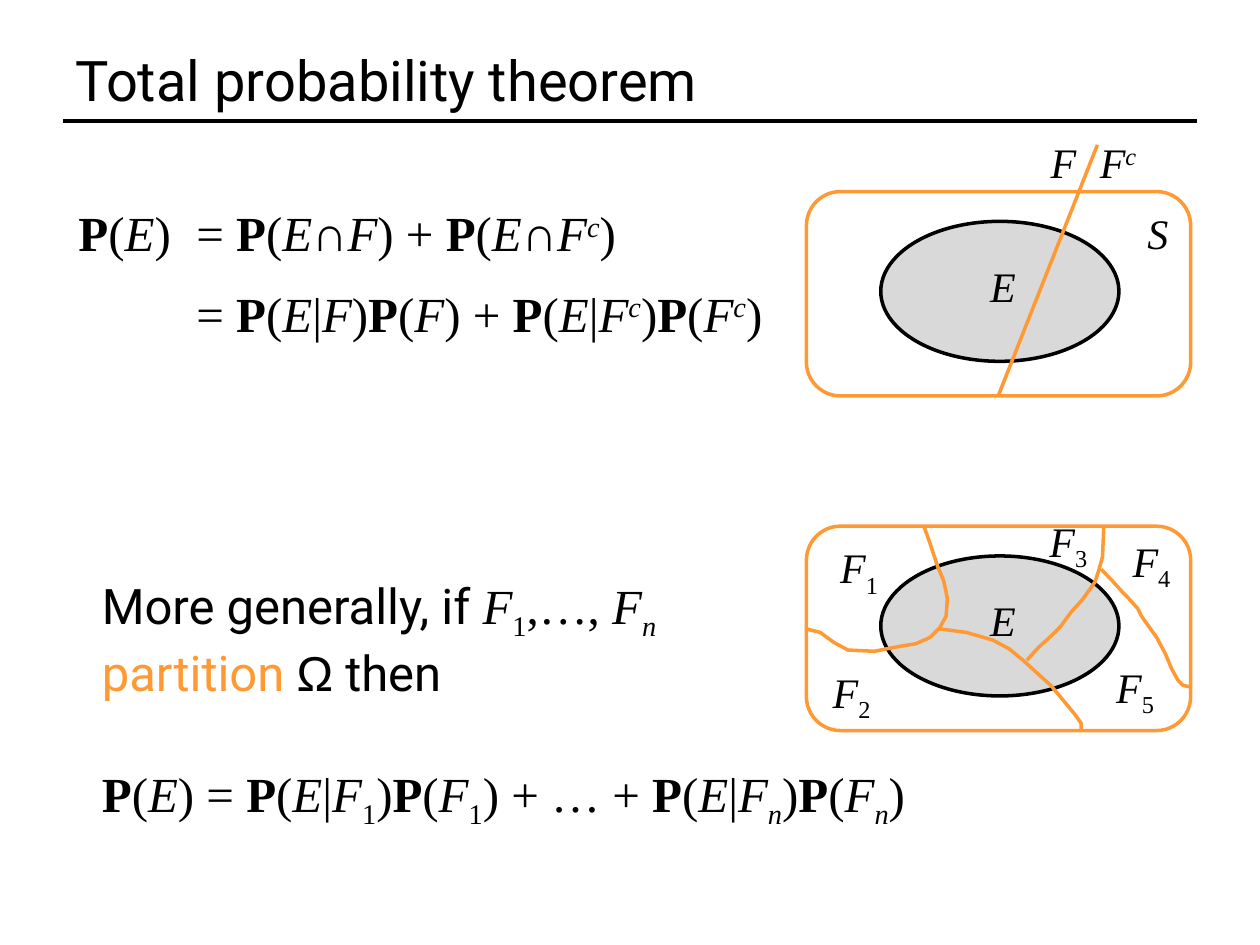
from itertools import groupby

from lxml.etree import SubElement
from pptx import Presentation
from pptx.dml.color import RGBColor
from pptx.enum.shapes import MSO_CONNECTOR as Connector, MSO_SHAPE as Preset
from pptx.enum.text import MSO_ANCHOR as Anchor, PP_ALIGN as Align
from pptx.oxml.ns import qn
from pptx.util import Pt

BLACK = RGBColor(0x00, 0x00, 0x00)
ORANGE = RGBColor(0xFF, 0x99, 0x33)
GREY = RGBColor(0xD9, 0xD9, 0xD9)

SHIFTS = {"^": "30000", "_": "-25000"}

SET_CURVES = [
    [(527.8, 300.2), (531.4, 310.3), (535.7, 323.3), (539.3, 331.9),
     (541.4, 342), (540.7, 352.1), (537.1, 358.6), (531.4, 364.3),
     (523.4, 367.9), (514.1, 369.4), (506.9, 370.8), (499.7, 372.2),
     (484.6, 371.5), (476.6, 367.2), (468.7, 361.4), (460.1, 359.3)],
    [(536.4, 359.3), (552.2, 361.4), (567.4, 365.8), (576.7, 370.8),
     (584.6, 377.3), (593.3, 385.2), (600.5, 391.7), (607.7, 400.3),
     (614.2, 408.2), (617.8, 413.3), (617.8, 418.3)],
    [(586.8, 377.3), (593.3, 370.1), (600.5, 363.6), (606.2, 357.8),
     (612, 349.9), (618.5, 342.7), (625.7, 332.6), (627.8, 326.2),
     (630, 318.2), (630.7, 301.7)],
    [(629.3, 325.4), (635, 331.2), (640.8, 337.7), (644.4, 341.3),
     (650.2, 347.8), (652.3, 352.1), (661, 364.3), (666, 373.7),
     (669.6, 382.3), (673.2, 388.8), (676.1, 391.7), (679.7, 392.4)],
]

SET_LABELS = [("F_1", 473, 306), ("F_2", 468.7, 377.3), ("F_3", 592.6, 290.9),
              ("F_4", 640.1, 302.4), ("F_5", 630.7, 374.4)]


def math(formula):
    styled, shift = [], None
    for char in formula:
        if char in SHIFTS:
            shift = SHIFTS[char]
        else:
            styled.append((char, (char == "P", char in "EFScn∩", shift)))
            shift = None
    return [("".join(char for char, _ in group),
             {"bold": bold, "italic": italic, "baseline": baseline})
            for (bold, italic, baseline), group
            in groupby(styled, key=lambda pair: pair[1])]


class SlideBuilder:
    math_font = "Times New Roman"
    text_font = "Roboto"
    line_width = Pt(2)

    def __init__(self, slide):
        self.slide = slide

    def fill_text(self, shape, paragraphs, size, align=Align.LEFT,
                  anchor=Anchor.TOP, wrap=False):
        frame = shape.text_frame
        for name, value in {"word_wrap": wrap, "vertical_anchor": anchor}.items():
            setattr(frame, name, value)
        for index, pieces in enumerate(paragraphs):
            paragraph = frame.add_paragraph() if index else frame.paragraphs[0]
            paragraph.alignment = align
            for text, changes in pieces:
                self.add_run(paragraph, text, size, changes)

    def add_run(self, paragraph, text, size, changes):
        run = paragraph.add_run()
        run.text = text
        formats = {"name": self.math_font, "color": BLACK, "baseline": None}
        formats.update(changes)
        run.font.color.rgb = formats.pop("color")
        baseline = formats.pop("baseline")
        for name, value in {"size": Pt(size), **formats}.items():
            setattr(run.font, name, value)
        if baseline:
            run.font._element.set("baseline", baseline)

    def text(self, paragraphs, left, top, width, height, size, **layout):
        box = self.slide.shapes.add_textbox(Pt(left), Pt(top), Pt(width), Pt(height))
        self.fill_text(box, paragraphs, size, **layout)

    def formula(self, formula, left, top, width, height=41, size=28, **layout):
        self.text([math(formula)], left, top, width, height, size, **layout)

    def label(self, formula, left, top, width=38):
        self.formula(formula, left, top, width, height=36, size=24)

    def outline(self, shape, color, fill=None):
        shape.shadow.inherit = False
        shape.line.color.rgb = color
        shape.line.width = self.line_width
        if fill is None:
            shape.fill.background()
        else:
            shape.fill.solid()
            shape.fill.fore_color.rgb = fill

    def shape(self, preset, left, top, width, height, color, fill=None):
        shape = self.slide.shapes.add_shape(
            preset, Pt(left), Pt(top), Pt(width), Pt(height))
        self.outline(shape, color, fill)
        return shape

    def line(self, start, end, color):
        line = self.slide.shapes.add_connector(
            Connector.STRAIGHT, *(Pt(value) for value in start + end))
        line.line.color.rgb = color
        line.line.width = self.line_width
        SubElement(line._element.spPr, qn("a:effectLst"))

    def curve(self, points, color):
        start, *rest = [(Pt(x), Pt(y)) for x, y in points]
        builder = self.slide.shapes.build_freeform(*start)
        builder.add_line_segments(rest, close=False)
        self.outline(builder.convert_to_shape(), color)

    def sample_space(self, top, name=""):
        space = self.shape(Preset.ROUNDED_RECTANGLE, 460.8, top, 219.6, 116.8, ORANGE)
        if name:
            self.fill_text(space, [math(name)], 24, align=Align.RIGHT, wrap=True)
        self.shape(Preset.OVAL, 503.3, top + 17, 136.1, 80, BLACK, GREY)
        self.label("E", 558.7, top + 35.6, 31.7)


def main():
    presentation = Presentation()
    presentation.slide_width, presentation.slide_height = Pt(720), Pt(540)
    slide = presentation.slides.add_slide(presentation.slide_layouts[6])
    builder = SlideBuilder(slide)
    plain = {"name": builder.text_font}

    builder.line((36, 69.1), (684, 69.1), BLACK)
    builder.text([[("Total probability theorem", plain)]], 36, 21.6, 648, 47.5, 32,
                 anchor=Anchor.MIDDLE, wrap=True)

    builder.formula("P(E)", 37.4, 112.3, 67.7, align=Align.CENTER)
    builder.formula("= P(E∩F) + P(E∩F^c)", 105.1, 112.3, 257.8)
    builder.formula("= P(E|F)P(F) + P(E|F^c)P(F^c)", 105.1, 158.4, 349.2)

    builder.sample_space(109.5, "S")
    builder.line((627.1, 82.8), (570.2, 226.8), ORANGE)
    builder.label("F", 593.3, 74.2, 27.4)
    builder.label("F^c", 621.4, 74.2, 36)

    builder.sample_space(300.7)
    for points in SET_CURVES:
        builder.curve(points, ORANGE)
    for name, left, top in SET_LABELS:
        builder.label(name, left, top)

    builder.formula("P(E) = P(E|F_1)P(F_1) + … + P(E|F_n)P(F_n)", 51.1, 432.7, 496.1)
    builder.text([
        [("More generally, if ", plain)] + math("F_1,…, F_n"),
        [("partition ", {**plain, "color": ORANGE}),
         ("Ω", {"name": "Arial"}), (" then", plain)],
    ], 51.1, 325.4, 334.8, 74.9, 28)

    presentation.save("out.pptx")


if __name__ == "__main__":
    main()
